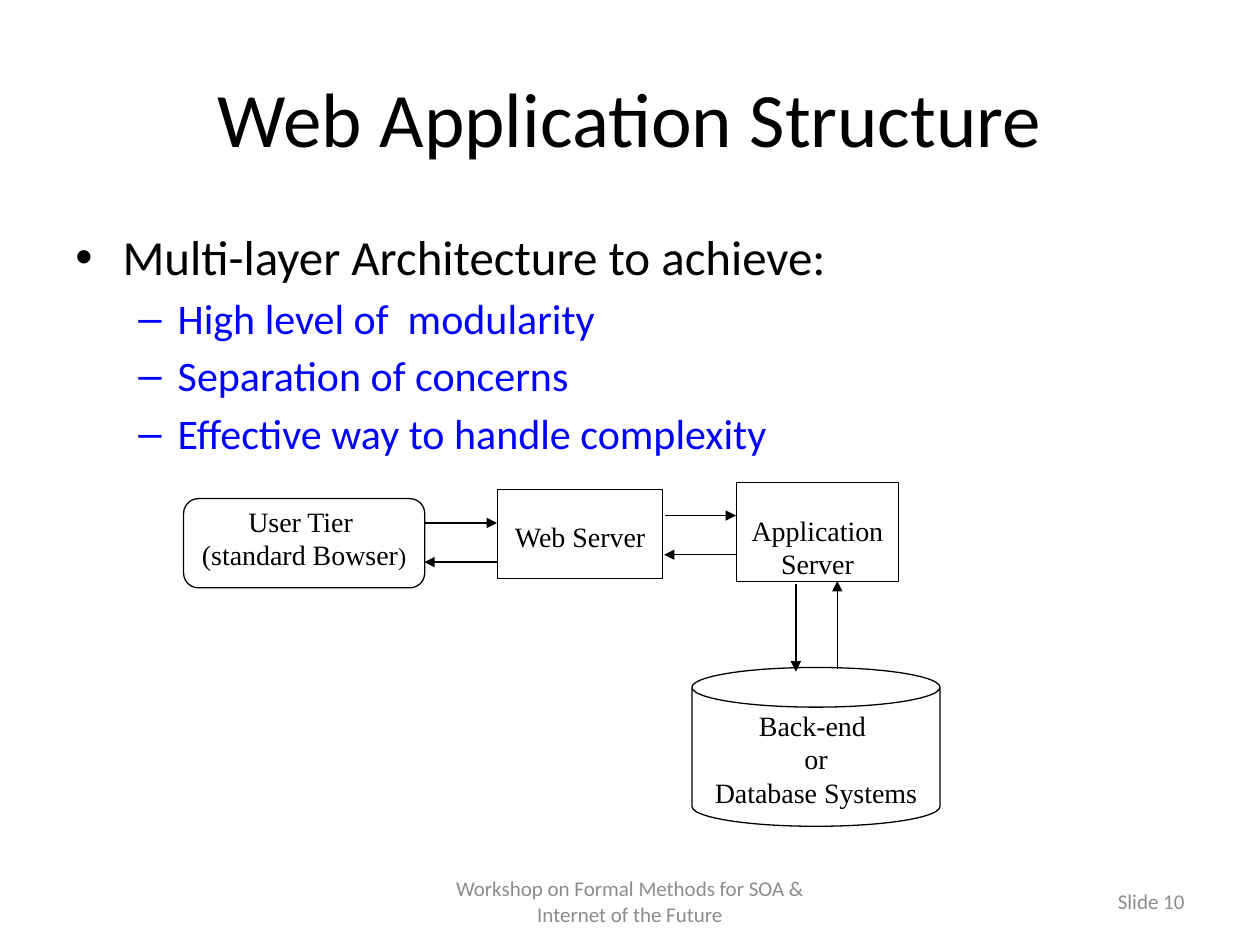
from pptx import Presentation
from pptx.dml.color import RGBColor
from pptx.enum.shapes import MSO_CONNECTOR, MSO_SHAPE
from pptx.enum.text import MSO_ANCHOR, PP_ALIGN
from pptx.oxml.ns import qn
from pptx.util import Pt
from lxml import etree

LEFT, CENTER, RIGHT = PP_ALIGN.LEFT, PP_ALIGN.CENTER, PP_ALIGN.RIGHT
TOP, MIDDLE = MSO_ANCHOR.TOP, MSO_ANCHOR.MIDDLE
RECTANGLE, ROUNDED, CAN = MSO_SHAPE.RECTANGLE, MSO_SHAPE.ROUNDED_RECTANGLE, MSO_SHAPE.CAN
STRAIGHT = MSO_CONNECTOR.STRAIGHT
COLORS = {"black": "000000", "white": "FFFFFF", "blue": "0000FF", "gray": "8C8C8C"}


def color(name):
    return RGBColor.from_string(COLORS[name])


def add_text(paragraph, text, *, size, font="Calibri", fill="black", align=LEFT):
    paragraph.alignment = align
    run = paragraph.add_run()
    run.text = text
    run.font.size = Pt(size)
    run.font.name = font
    run.font.color.rgb = color(fill)


class DiagramSlide:
    """Draws styled text, boxes and arrows on one slide."""

    def __init__(self, slide):
        self.slide = slide
        self.line_width = Pt(0.75)
        self.diagram_text = {"size": 16, "font": "Times New Roman", "align": CENTER}

    def text_box(self, bounds, anchor=TOP):
        frame = self.slide.shapes.add_textbox(*map(Pt, bounds)).text_frame
        frame.word_wrap = True
        frame.vertical_anchor = anchor
        return frame

    def label(self, bounds, text, **text_format):
        frame = self.text_box(bounds, MIDDLE)
        add_text(frame.paragraphs[0], text, **text_format)

    def bullets(self, bounds, items):
        frame = self.text_box(bounds)
        for index, (text, level) in enumerate(items):
            paragraph = frame.paragraphs[0] if index == 0 else frame.add_paragraph()
            paragraph.level = level
            paragraph.space_before = Pt((1, 4)[level])
            add_text(paragraph, text, size=(28, 24)[level], fill=("black", "blue")[level])
            properties = paragraph._p.get_or_add_pPr()
            properties.set("marL", str(Pt((27, 58.5)[level])))
            properties.set("indent", str(-Pt((27, 22.5)[level])))
            etree.SubElement(properties, qn("a:buFont")).set("typeface", "Arial")
            etree.SubElement(properties, qn("a:buChar")).set("char", "•–"[level])

    def box(self, kind, bounds, lines, side=1.44, top=0.72):
        shape = self.slide.shapes.add_shape(kind, *map(Pt, bounds))
        shape.shadow.inherit = False
        shape.fill.solid()
        shape.fill.fore_color.rgb = color("white")
        shape.line.color.rgb = color("black")
        shape.line.width = self.line_width
        frame = shape.text_frame
        frame.word_wrap = True
        frame.vertical_anchor = TOP
        frame.margin_left = frame.margin_right = Pt(side)
        frame.margin_top, frame.margin_bottom = Pt(top), Pt(0)
        for index, text in enumerate(lines):
            paragraph = frame.paragraphs[0] if index == 0 else frame.add_paragraph()
            add_text(paragraph, text, **self.diagram_text)
        return frame

    def arrow(self, *ends):
        connector = self.slide.shapes.add_connector(STRAIGHT, *map(Pt, ends))
        connector.line.color.rgb = color("black")
        connector.line.width = self.line_width
        etree.SubElement(connector.line._get_or_add_ln(), qn("a:tailEnd")).set("type", "triangle")
        etree.SubElement(connector._element.spPr, qn("a:effectLst"))


def main():
    presentation = Presentation()
    presentation.slide_width, presentation.slide_height = Pt(720), Pt(540)
    page = DiagramSlide(presentation.slides.add_slide(presentation.slide_layouts[6]))

    page.label((36, 21.6, 648, 90), "Web Application Structure", size=44, align=CENTER)
    page.bullets((36, 126, 648, 356.4), [
        ("Multi-layer Architecture to achieve:", 0),
        ("High level of  modularity", 1),
        ("Separation of concerns", 1),
        ("Effective way to handle complexity", 1),
    ])
    footer = {"size": 12, "fill": "gray"}
    page.label((246, 500.5, 228, 28.8), "Workshop on Formal Methods for SOA & Internet of the Future",
               align=CENTER, **footer)
    page.label((516, 500.5, 168, 28.8), "Slide 10", align=RIGHT, **footer)

    user_tier = page.box(ROUNDED, (104.9, 284.9, 137.8, 51), ["User Tier ", "(standard Bowser"])
    add_text(user_tier.paragraphs[-1], ")", **{**page.diagram_text, "size": 14})
    page.box(RECTANGLE, (284.4, 279.6, 94.2, 51), ["Web Server"], side=7.2, top=17.4)
    page.box(RECTANGLE, (421, 275.8, 92.3, 56.6), ["Application", "Server"], side=7.2, top=17.4)
    page.box(CAN, (395.4, 381.4, 141.8, 90.8), ["Back-end ", "or", "Database Systems"])

    for left, right, y in ((243, 284, 298.8), (380, 420.6, 294.6)):
        page.arrow(left, y, right, y)
        page.arrow(right, y + 22.4, left - 0.5, y + 22.4)
    page.arrow(454.8, 334, 454.8, 383.8)
    page.arrow(478.5, 382.4, 478.5, 332)

    presentation.save("out.pptx")


if __name__ == "__main__":
    main()
